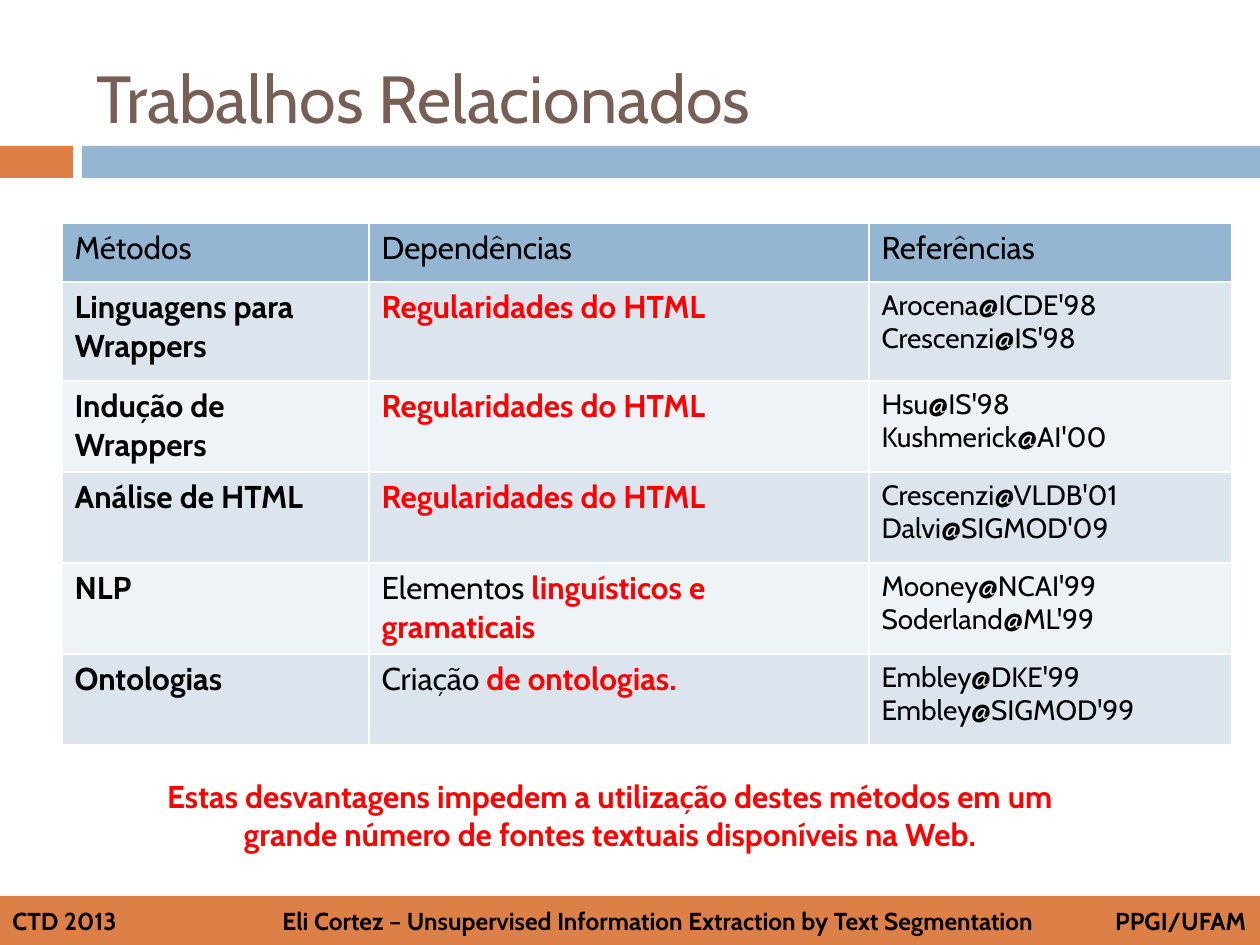
from lxml import etree
from pptx import Presentation
from pptx.dml.color import RGBColor
from pptx.enum.shapes import MSO_SHAPE
from pptx.enum.text import MSO_ANCHOR, MSO_AUTO_SIZE, PP_ALIGN
from pptx.oxml.ns import qn
from pptx.util import Emu, Pt

RECTANGLE = MSO_SHAPE.RECTANGLE
MIDDLE = MSO_ANCHOR.MIDDLE
NO_FIT = MSO_AUTO_SIZE.NONE
GROW = MSO_AUTO_SIZE.SHAPE_TO_FIT_TEXT
LEFT, CENTER = PP_ALIGN.LEFT, PP_ALIGN.CENTER

EMU_PER_PX = 914400 / 126
FONT = "Cabin"
BLACK = RGBColor(0x00, 0x00, 0x00)
RED = RGBColor(0xFF, 0x00, 0x00)
BROWN = RGBColor(0x77, 0x5F, 0x55)
ORANGE = RGBColor(0xDD, 0x80, 0x47)
BLUE = RGBColor(0x94, 0xB6, 0xD2)
BAND_DARK = RGBColor(0xDC, 0xE5, 0xEE)
BAND_LIGHT = RGBColor(0xEE, 0xF3, 0xF7)
WHITE = RGBColor(0xFF, 0xFF, 0xFF)

COLUMN_WIDTHS = [307, 500, 363]
ROW_HEIGHTS = [59, 99, 91, 91, 91, 91]
HEADINGS = ["Métodos", "Dependências", "Referências"]
METHODS = [
    ("Linguagens para Wrappers", "", "Regularidades do HTML",
     ["Arocena@ICDE'98", "Crescenzi@IS'98"]),
    ("Indução de Wrappers", "", "Regularidades do HTML",
     ["Hsu@IS'98", "Kushmerick@AI'00"]),
    ("Análise de HTML", "", "Regularidades do HTML",
     ["Crescenzi@VLDB'01", "Dalvi@SIGMOD'09"]),
    ("NLP", "Elementos ", "linguísticos e gramaticais",
     ["Mooney@NCAI'99", "Soderland@ML'99"]),
    ("Ontologias", "Criação ", "de ontologias.",
     ["Embley@DKE'99", "Embley@SIGMOD'99"]),
]
FOOTER = ["CTD 2013",
          "Eli Cortez – Unsupervised Information Extraction by Text Segmentation",
          "PPGI/UFAM"]
FOOTER_TABS = [(270, "l"), (1234, "r")]
WARNING = ("Estas desvantagens impedem a utilização destes métodos em um "
           "grande número de fontes textuais disponíveis na Web.")


def px(length):
    return Emu(round(length * EMU_PER_PX))


def set_font(font, size, color=BLACK, bold=False):
    font.name = FONT
    font.size = Pt(size)
    font.bold = bold
    font.color.rgb = color


def write(para, text, size, color=BLACK, bold=False, align=LEFT):
    para.text = text
    para.alignment = align
    set_font(para.font, size, color, bold)


def add_bar(page, left, top, width, height, color):
    bar = page.shapes.add_shape(RECTANGLE, px(left), px(top), px(width), px(height))
    bar.shadow.inherit = False
    bar.fill.solid()
    bar.fill.fore_color.rgb = color
    bar.line.fill.background()
    return bar


def add_tab_stops(para, stops):
    properties = para._p.get_or_add_pPr()
    tabs = etree.Element(qn("a:tabLst"))
    for position, align in stops:
        etree.SubElement(tabs, qn("a:tab"), pos=str(px(position)), algn=align)
    properties.insert(0, tabs)


def add_footer(page):
    bar = add_bar(page, 0, 896, 1261, 50, ORANGE)
    bar.text_frame.vertical_anchor = MIDDLE
    para = bar.text_frame.paragraphs[0]
    write(para, "\t".join(FOOTER), 14, bold=True)
    add_tab_stops(para, FOOTER_TABS)


def place_title(page, text):
    title = page.shapes.title
    title.left, title.top, title.width, title.height = map(px, (84, 29, 1124, 136))
    title.text_frame.auto_size = NO_FIT
    title.text_frame.vertical_anchor = MIDDLE
    write(title.text_frame.paragraphs[0], text, 38, BROWN)


def style_cell(cell, color):
    cell.fill.solid()
    cell.fill.fore_color.rgb = color
    properties = cell._tc.get_or_add_tcPr()
    for index, side in enumerate("LRTB"):
        border = etree.Element(qn(f"a:ln{side}"), w=str(Pt(1)))
        fill = etree.SubElement(border, qn("a:solidFill"))
        etree.SubElement(fill, qn("a:srgbClr"), val=str(WHITE))
        properties.insert(index, border)


def write_dependency(para, lead, emphasis):
    write(para, "", 18, RED, bold=True)
    if lead:
        span = para.add_run()
        span.text = lead
        set_font(span.font, 18)
    span = para.add_run()
    span.text = emphasis
    set_font(span.font, 18, RED, bold=True)


def write_references(frame, references):
    frame.text = "\n".join(references)
    for para in frame.paragraphs:
        set_font(para.font, 16)


def add_methods_table(page):
    frame = page.shapes.add_table(
        len(ROW_HEIGHTS), len(COLUMN_WIDTHS), px(62), px(223),
        px(sum(COLUMN_WIDTHS)), px(sum(ROW_HEIGHTS)))
    table = frame.table
    for column, width in zip(table.columns, COLUMN_WIDTHS):
        column.width = px(width)
    for row, height in zip(table.rows, ROW_HEIGHTS):
        row.height = px(height)

    for cell, heading in zip(table.rows[0].cells, HEADINGS):
        style_cell(cell, BLUE)
        write(cell.text_frame.paragraphs[0], heading, 18)

    for index, (method, lead, emphasis, references) in enumerate(METHODS, start=1):
        cells = list(table.rows[index].cells)
        for cell in cells:
            style_cell(cell, BAND_DARK if index % 2 else BAND_LIGHT)
        write(cells[0].text_frame.paragraphs[0], method, 18, bold=True)
        write_dependency(cells[1].text_frame.paragraphs[0], lead, emphasis)
        write_references(cells[2].text_frame, references)


def add_warning(page):
    box = page.shapes.add_textbox(px(140), px(771), px(940), px(89))
    box.text_frame.word_wrap = True
    box.text_frame.auto_size = GROW
    write(box.text_frame.paragraphs[0], WARNING, 18, RED, bold=True, align=CENTER)


def main():
    deck = Presentation()
    deck.slide_width, deck.slide_height = px(1260), px(945)
    page = deck.slides.add_slide(deck.slide_layouts[5])
    add_bar(page, 0, 146, 73, 32, ORANGE)
    add_bar(page, 82, 146, 1178, 32, BLUE)
    add_footer(page)
    place_title(page, "Trabalhos Relacionados")
    add_methods_table(page)
    add_warning(page)
    deck.save("out.pptx")


if __name__ == "__main__":
    main()
